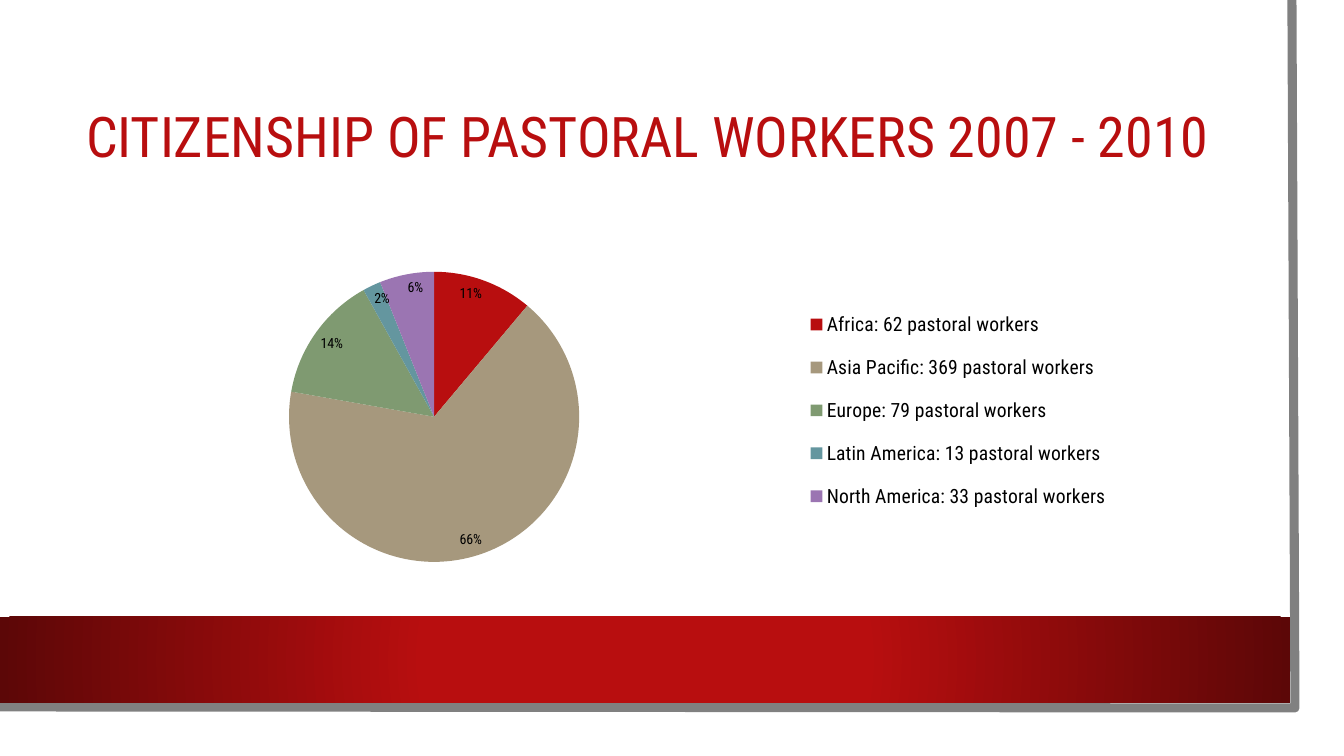
import pptx
import pptx.util
import pptx.chart.data
import pptx.dml.color
import pptx.enum.chart
import pptx.enum.shapes
import pptx.enum.text
import pptx.oxml

RGBColor = pptx.dml.color.RGBColor
WHITE = RGBColor(0xFF, 0xFF, 0xFF)
BLACK = RGBColor(0, 0, 0)
GRAY = RGBColor(0x80, 0x80, 0x80)
RED = RGBColor(0xB8, 0x0E, 0x0F)
DARK_RED = RGBColor(0x5C, 0x07, 0x07)
TAN = RGBColor(0xA6, 0x98, 0x7D)
GREEN = RGBColor(0x7F, 0x9A, 0x71)
TEAL = RGBColor(0x64, 0x96, 0x9F)
PURPLE = RGBColor(0x9B, 0x75, 0xB2)
FONT = "Roboto Condensed"
PX_PER_INCH = 100.8


def px(*lengths):
    return [pptx.util.Inches(length / PX_PER_INCH) for length in lengths]


deck = pptx.Presentation()
deck.slide_width, deck.slide_height = px(1344, 756)
slide = deck.slides.add_slide(deck.slide_layouts[5])
shapes = slide.shapes
RECTANGLE = pptx.enum.shapes.MSO_SHAPE.RECTANGLE

page = shapes.add_shape(RECTANGLE, *px(0, 0, 1320, 733))
page.shadow.inherit = False
page.fill.solid()
page.fill.fore_color.rgb = WHITE
page.line.fill.background()

outline = shapes.build_freeform(*px(1292, 0), scale=1.0)
outline.add_line_segments([px(1295, 708), px(-3, 707)], close=False)
edge = outline.convert_to_shape()
edge.shadow.inherit = False
edge.fill.background()
edge.line.color.rgb = GRAY
edge.line.width = pptx.util.Pt(6.5)

band = shapes.add_shape(RECTANGLE, *px(0, 617, 1290, 86))
band.shadow.inherit = False
band.line.fill.background()
band.fill.gradient()
gradient = band.fill._fill._gradFill
for part in list(gradient):
    gradient.remove(part)
namespace = 'xmlns:a="http://schemas.openxmlformats.org/drawingml/2006/main"'
gradient.append(pptx.oxml.parse_xml(
    f'<a:gsLst {namespace}>'
    f'<a:gs pos="34000"><a:srgbClr val="{RED}"/></a:gs>'
    f'<a:gs pos="100000"><a:srgbClr val="{DARK_RED}"/></a:gs></a:gsLst>'))
gradient.append(pptx.oxml.parse_xml(
    f'<a:path {namespace} path="circle">'
    '<a:fillToRect l="50000" t="50000" r="50000" b="50000"/></a:path>'))

title = shapes.title
shapes._spTree.append(title._element)
title.left, title.top, title.width, title.height = px(76, 76, 1146, 127)
title.text_frame.text = "CITIZENSHIP OF PASTORAL WORKERS 2007 - 2010"
title.text_frame.word_wrap = True
title.text_frame.auto_size = pptx.enum.text.MSO_AUTO_SIZE.NONE
title.text_frame.vertical_anchor = pptx.enum.text.MSO_ANCHOR.MIDDLE
heading = title.text_frame.paragraphs[0]
heading.alignment = pptx.enum.text.PP_ALIGN.LEFT
heading.line_spacing = 0.9
heading.font.name = FONT
heading.font.size = pptx.util.Pt(40)
heading.font.color.rgb = RED

regions = [
    ("Africa: 62 pastoral workers", 11, RED),
    ("Asia Pacific: 369 pastoral workers", 66, TAN),
    ("Europe: 79 pastoral workers", 14, GREEN),
    ("Latin America: 13 pastoral workers", 2, TEAL),
    ("North America: 33 pastoral workers", 6, PURPLE),
]
shares = pptx.chart.data.CategoryChartData()
shares.categories = [region for region, share, color in regions]
shares.add_series("Series 1", [share for region, share, color in regions])
pie = shapes.add_chart(pptx.enum.chart.XL_CHART_TYPE.PIE,
                       *px(76, 228, 1146, 365), shares).chart
pie.has_title = False
pie.font.name = FONT
pie.font.size = pptx.util.Pt(10)
pie.font.color.rgb = BLACK

plot = pie.plots[0]
plot.vary_by_categories = True
for index, (region, share, color) in enumerate(regions):
    wedge = plot.series[0].points[index].format
    wedge.fill.solid()
    wedge.fill.fore_color.rgb = color
    wedge.line.fill.background()

plot.has_data_labels = True
labels = plot.data_labels
labels.show_value = True
labels.show_percentage = False
labels.number_format = '0"%"'
labels.number_format_is_linked = False
labels.position = pptx.enum.chart.XL_LABEL_POSITION.INSIDE_END
labels.font.name = FONT
labels.font.size = pptx.util.Pt(10)
labels.font.color.rgb = BLACK

pie.has_legend = True
legend = pie.legend
legend.position = pptx.enum.chart.XL_LEGEND_POSITION.RIGHT
legend.include_in_layout = False
legend.font.name = FONT
legend.font.size = pptx.util.Pt(14)
legend.font.color.rgb = BLACK

plot_area = pie._chartSpace.chart.plotArea
for old in plot_area.xpath("c:layout"):
    plot_area.remove(old)
for old in legend._element.xpath("c:layout"):
    legend._element.remove(old)
layouts = [
    (plot_area, 0, '<c:layoutTarget val="inner"/>', (0.105, 0.12, 0.415, 0.795)),
    (legend._element, 1, "", (0.63, 0.18, 0.28, 0.64)),
]
for area, place, target, (x, y, w, h) in layouts:
    area.insert(place, pptx.oxml.parse_xml(
        '<c:layout xmlns:c="http://schemas.openxmlformats.org/drawingml/2006/chart">'
        f'<c:manualLayout>{target}<c:xMode val="edge"/><c:yMode val="edge"/>'
        f'<c:x val="{x}"/><c:y val="{y}"/><c:w val="{w}"/><c:h val="{h}"/>'
        '</c:manualLayout></c:layout>'))

deck.save("out.pptx")
